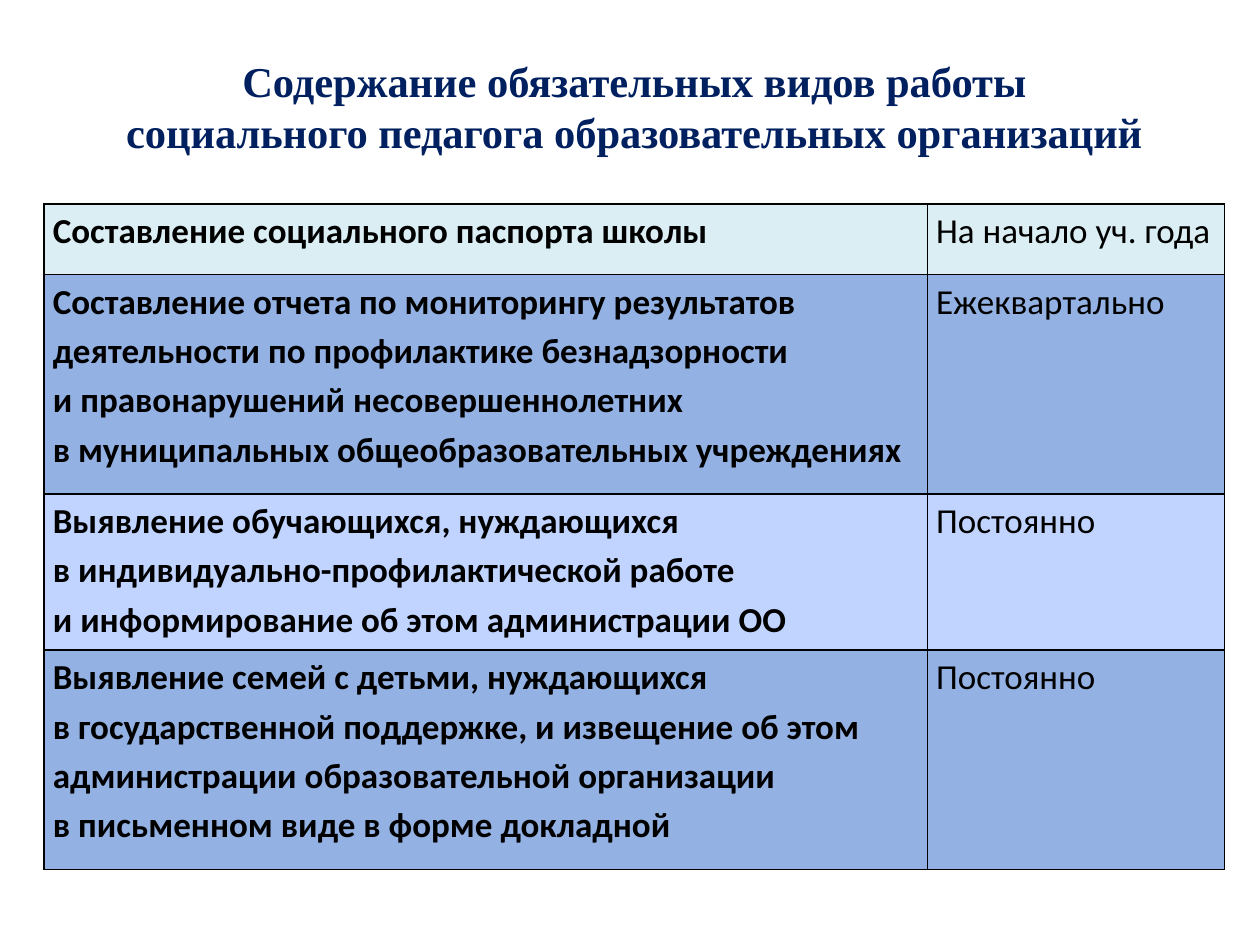
from copy import deepcopy
from lxml import etree
from pptx import Presentation
from pptx import util as u
from pptx.dml.color import RGBColor
from pptx.enum import text
from pptx.oxml.ns import qn

HUES = {"title": "002060", "ink": "000000", "pale": "DBEEF4",
        "deep": "93B1E3", "soft": "C0D4FF"}
COLS = [7.01, 2.36]
ROWS = [
    (0.56, "pale", "Составление социального паспорта школы", "На начало уч. года"),
    (1.74, "deep", "Составление отчета по мониторингу результатов деятельности "
     "по профилактике безнадзорности\vи правонарушений несовершеннолетних\v"
     "в муниципальных общеобразовательных учреждениях", "Ежеквартально"),
    (1.24, "soft", "Выявление обучающихся, нуждающихся\v"
     "в индивидуально-профилактической работе\v"
     "и информирование об этом администрации ОО", "Постоянно"),
    (1.74, "deep", "Выявление семей с детьми, нуждающихся\v"
     "в государственной поддержке, и извещение об этом администрации "
     "образовательной организации\vв письменном виде в форме докладной", "Постоянно"),
]


def apply(item, **vals):
    for name, val in vals.items():
        setattr(item, name, val)


def write(frame, words, hue, para, **font):
    line = frame.paragraphs[0]
    line.text = words
    apply(line, **para)
    for run in line.runs:
        apply(run.font, **font)
        run.font.color.rgb = RGBColor.from_string(HUES[hue])
    for gap in line._p.findall(qn("a:br")):
        gap.append(deepcopy(line.runs[0]._r.rPr))


def edge(cell):
    props = cell._tc.get_or_add_tcPr()
    for spot, side in enumerate(("lnL", "lnR", "lnT", "lnB")):
        line = etree.Element(qn("a:" + side), w=str(u.Pt(1)))
        fill = etree.SubElement(line, qn("a:solidFill"))
        etree.SubElement(fill, qn("a:srgbClr"), val=HUES["ink"])
        props.insert(spot, line)


def head(slide, box):
    title = slide.shapes.title
    apply(title, **dict(zip(("left", "top", "width", "height"), box)))
    frame = title.text_frame
    apply(frame, word_wrap=True, auto_size=text.MSO_AUTO_SIZE.NONE,
          vertical_anchor=text.MSO_ANCHOR.MIDDLE)
    write(frame, "Содержание обязательных видов работы\v"
          "социального педагога образовательных организаций", "title",
          {"alignment": text.PP_ALIGN.CENTER},
          name="Times New Roman", size=u.Pt(24.3), bold=True)


def duties(slide, box):
    grid = slide.shapes.add_table(len(ROWS), len(COLS), *box).table
    for col, share in zip(grid.columns, COLS):
        col.width = int(box[2] * share / sum(COLS))
    total = sum(row[0] for row in ROWS)
    for r, (share, hue, *words) in enumerate(ROWS):
        grid.rows[r].height = int(box[3] * share / total)
        for c, word in enumerate(words):
            cell = grid.cell(r, c)
            apply(cell, margin_left=u.Inches(0.07), margin_right=u.Inches(0.07),
                  margin_top=0, margin_bottom=0)
            cell.fill.solid()
            cell.fill.fore_color.rgb = RGBColor.from_string(HUES[hue])
            edge(cell)
            write(cell.text_frame, word, "ink", {"line_spacing": 1.15},
                  name="Calibri", size=u.Pt(20), bold=c == 0)


def main():
    deck = Presentation()
    apply(deck, slide_width=u.Inches(10), slide_height=u.Inches(7.5))
    slide = deck.slides.add_slide(deck.slide_layouts[5])
    head(slide, [u.Inches(n) for n in (0.5, 0.22, 9.07, 1.25)])
    duties(slide, [u.Inches(n) for n in (0.35, 1.62, 9.37, 5.28)])
    deck.save("out.pptx")


if __name__ == "__main__":
    main()
